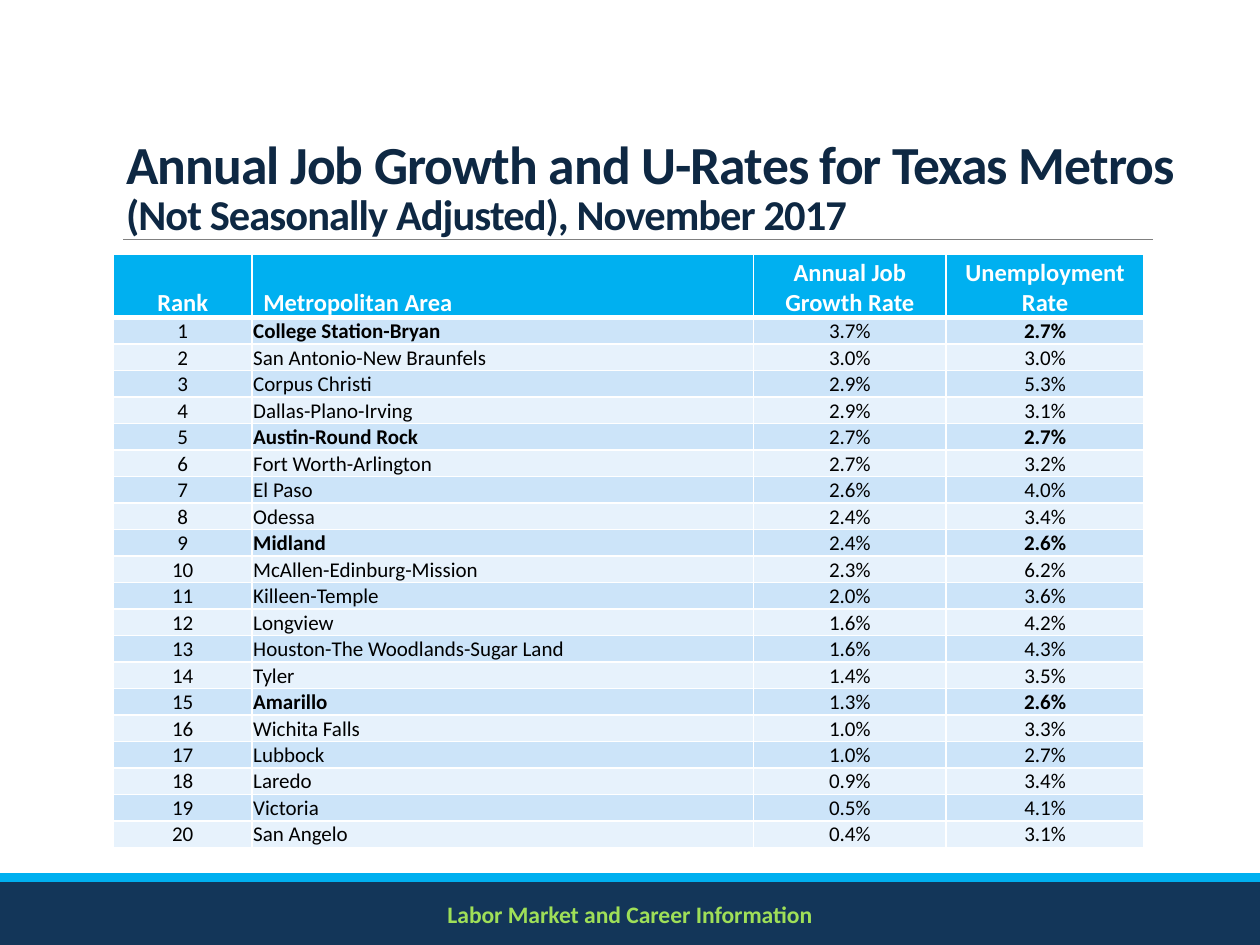
import pptx
import pptx.dml.color
import pptx.enum.shapes
import pptx.enum.text
import pptx.oxml
import pptx.oxml.ns
import pptx.util
from pptx.util import Inches

FONT = "Calibri"
WHITE, BLACK, NAVY, SKY = "FFFFFF", "000000", "133659", "00B0F0"
BANDS = ("CCE4F9", "E7F2FC")
CENTER = pptx.enum.text.PP_ALIGN.CENTER
LEFT = pptx.enum.text.PP_ALIGN.LEFT
MIDDLE = pptx.enum.text.MSO_ANCHOR.MIDDLE
BOTTOM = pptx.enum.text.MSO_ANCHOR.BOTTOM

HEADERS = ("Rank", "Metropolitan Area", "Annual Job Growth Rate", "Unemployment Rate")
ALIGNMENTS = (CENTER, LEFT, CENTER, CENTER)
COLUMN_WIDTHS = (1.1, 3.98, 1.53, 1.57)
HEADER_HEIGHT, ROW_HEIGHT = 0.5, 0.21
HIGHLIGHTED = {"College Station-Bryan", "Austin-Round Rock", "Midland", "Amarillo"}
METROS = (
    ("College Station-Bryan", 3.7, 2.7),
    ("San Antonio-New Braunfels", 3.0, 3.0),
    ("Corpus Christi", 2.9, 5.3),
    ("Dallas-Plano-Irving", 2.9, 3.1),
    ("Austin-Round Rock", 2.7, 2.7),
    ("Fort Worth-Arlington", 2.7, 3.2),
    ("El Paso", 2.6, 4.0),
    ("Odessa", 2.4, 3.4),
    ("Midland", 2.4, 2.6),
    ("McAllen-Edinburg-Mission", 2.3, 6.2),
    ("Killeen-Temple", 2.0, 3.6),
    ("Longview", 1.6, 4.2),
    ("Houston-The Woodlands-Sugar Land", 1.6, 4.3),
    ("Tyler", 1.4, 3.5),
    ("Amarillo", 1.3, 2.6),
    ("Wichita Falls", 1.0, 3.3),
    ("Lubbock", 1.0, 2.7),
    ("Laredo", 0.9, 3.4),
    ("Victoria", 0.5, 4.1),
    ("San Angelo", 0.4, 3.1),
)


def rgb(color):
    return pptx.dml.color.RGBColor.from_string(color)


def set_attributes(obj, **values):
    for name, value in values.items():
        setattr(obj, name, value)


def add_run(p, text, size, color, bold=True):
    r = p.add_run()
    r.text = text
    set_attributes(r.font, name=FONT, size=pptx.util.Pt(size), bold=bold)
    r.font.color.rgb = rgb(color)
    return r


def add_bar(s, top, height, color):
    sp = s.shapes.add_shape(pptx.enum.shapes.MSO_SHAPE.RECTANGLE,
                            0, Inches(top), Inches(10), Inches(height))
    sp.shadow.inherit = False
    sp.fill.solid()
    sp.fill.fore_color.rgb = rgb(color)
    sp.line.fill.background()


def add_rule(s, left, right, y):
    line = s.shapes.add_connector(pptx.enum.shapes.MSO_CONNECTOR.STRAIGHT,
                                  Inches(left), Inches(y), Inches(right), Inches(y))
    line.line.color.rgb = rgb("808080")
    line.line.width = pptx.util.Pt(0.5)
    line._element.spPr.append(pptx.oxml.parse_xml(
        f'<a:effectLst {pptx.oxml.ns.nsdecls("a")}/>'))


def add_footer(s, text):
    sp = s.shapes.add_textbox(0, Inches(7.08), Inches(10), Inches(0.35))
    set_attributes(sp.text_frame, word_wrap=True, vertical_anchor=MIDDLE)
    p = sp.text_frame.paragraphs[0]
    p.alignment = CENTER
    add_run(p, text, 13.5, "9FDF58")


def set_title(s, heading, subheading):
    sp = s.shapes.title
    set_attributes(sp, left=Inches(0.9), top=Inches(1.11),
                   width=Inches(9.03), height=Inches(0.8))
    tf = sp.text_frame
    set_attributes(tf, word_wrap=True, vertical_anchor=MIDDLE,
                   auto_size=pptx.enum.text.MSO_AUTO_SIZE.NONE)
    p = tf.paragraphs[0]
    set_attributes(p, alignment=LEFT, line_spacing=0.85)
    runs = [add_run(p, heading, 30.6, "0E2843")]
    p.add_line_break()
    runs.append(add_run(p, subheading, 24.3, "0E2843"))
    for r in runs:
        r._r.get_or_add_rPr().set("spc", "-50")


def set_borders(cell, **widths):
    """Draw white borders; widths are points for the sides L, R, T and B."""
    for side in "LRTB":
        width = pptx.util.Pt(widths.get(side, 1))
        cell._tc.get_or_add_tcPr().append(pptx.oxml.parse_xml(
            f'<a:ln{side} {pptx.oxml.ns.nsdecls("a")} w="{width}"><a:solidFill>'
            f'<a:srgbClr val="{WHITE}"/></a:solidFill></a:ln{side}>'))


def fill_cell(cell, text, alignment, fill, size, color, bold, indent=0.01, **borders):
    set_borders(cell, **borders)
    cell.fill.solid()
    cell.fill.fore_color.rgb = rgb(fill)
    set_attributes(cell, vertical_anchor=BOTTOM, margin_left=Inches(indent),
                   margin_top=Inches(0.01), margin_right=Inches(0.01), margin_bottom=0)
    p = cell.text_frame.paragraphs[0]
    p.alignment = alignment
    add_run(p, text, size, color, bold)


def add_metro_table(s):
    height = HEADER_HEIGHT + ROW_HEIGHT * len(METROS)
    table = s.shapes.add_table(
        len(METROS) + 1, len(HEADERS), Inches(0.9), Inches(2.02),
        Inches(sum(COLUMN_WIDTHS)), Inches(height)).table
    for column, width in zip(table.columns, COLUMN_WIDTHS):
        column.width = Inches(width)
    for i, row in enumerate(table.rows):
        row.height = Inches(ROW_HEIGHT if i else HEADER_HEIGHT)

    for col, (text, alignment) in enumerate(zip(HEADERS, ALIGNMENTS)):
        fill_cell(table.cell(0, col), text, alignment, SKY, 14, WHITE, True,
                  indent=0.09 if alignment == LEFT else 0.01, B=3)
    for rank, (metro, growth, unemployment) in enumerate(METROS, 1):
        texts = (str(rank), metro, f"{growth:.1f}%", f"{unemployment:.1f}%")
        for col, (text, alignment) in enumerate(zip(texts, ALIGNMENTS)):
            bold = metro in HIGHLIGHTED and col in (1, 3)
            fill_cell(table.cell(rank, col), text, alignment, BANDS[(rank - 1) % 2],
                      12, BLACK, bold, T=3 if rank == 1 else 1)


def main():
    prs = pptx.Presentation()
    set_attributes(prs, slide_width=Inches(10), slide_height=Inches(7.5))
    s = prs.slides.add_slide(prs.slide_layouts[5])
    add_bar(s, 7, 0.5, NAVY)
    add_bar(s, 6.93, 0.07, SKY)
    add_rule(s, 0.98, 9.15, 1.9)
    add_footer(s, "Labor Market and Career Information")
    set_title(s, "Annual Job Growth and U-Rates for Texas Metros",
              "(Not Seasonally Adjusted), November 2017")
    add_metro_table(s)
    prs.save("out.pptx")


if __name__ == "__main__":
    main()
